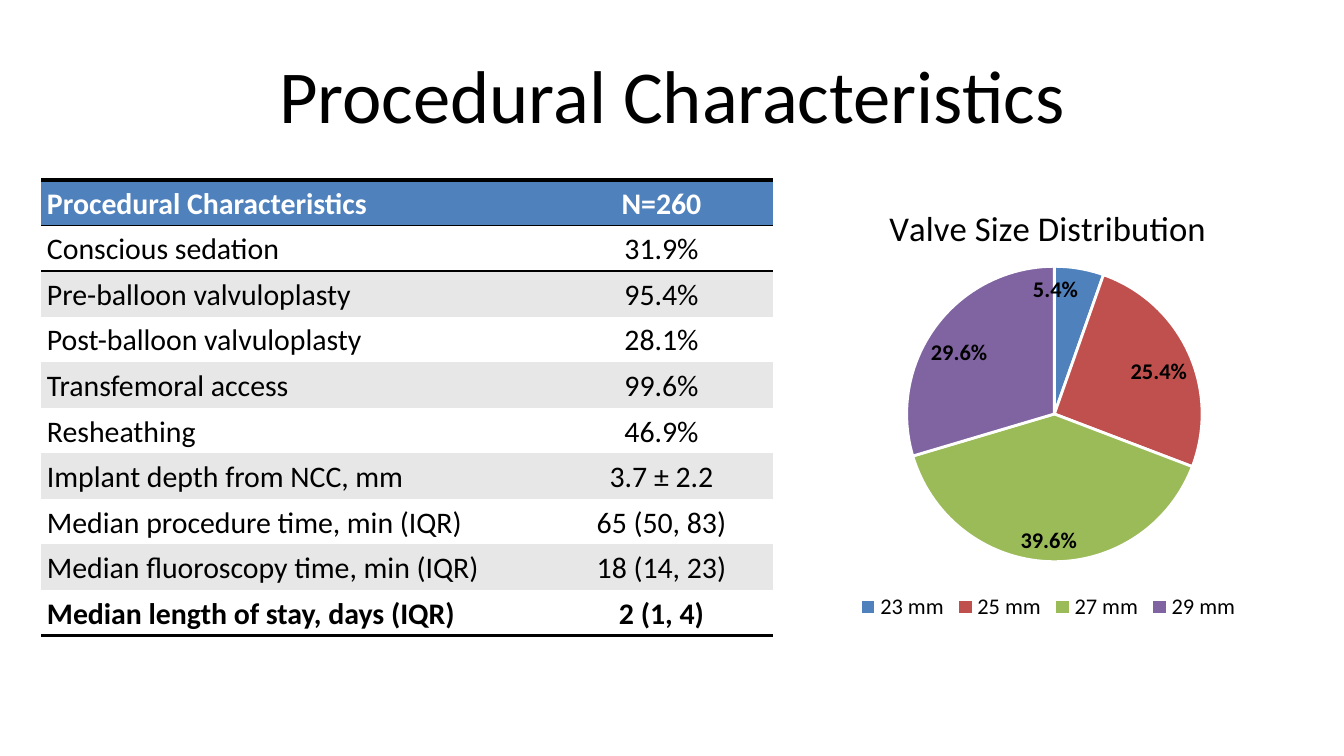
from lxml import etree
from pptx import Presentation
from pptx import util as u
from pptx.chart.data import CategoryChartData
from pptx.dml.color import RGBColor
from pptx.enum import chart as charts, text
from pptx.oxml import parse_xml
from pptx.oxml.ns import nsdecls, qn

SCALE = 914400 / 134.4  # EMU per px
FONT = "Calibri"
COLORS = {
    "black": "000000", "white": "FFFFFF", "band": "E7E7E7",
    "blue": "4F81BD", "red": "C0504D", "green": "9BBB59", "purple": "8064A2",
}
ROWS = [
    ("Procedural Characteristics", "N=260"),
    ("Conscious sedation", "31.9%"),
    ("Pre-balloon valvuloplasty", "95.4%"),
    ("Post-balloon valvuloplasty", "28.1%"),
    ("Transfemoral access", "99.6%"),
    ("Resheathing", "46.9%"),
    ("Implant depth from NCC, mm", "3.7 ± 2.2"),
    ("Median procedure time, min (IQR)", "65 (50, 83)"),
    ("Median fluoroscopy time, min (IQR)", "18 (14, 23)"),
    ("Median length of stay, days (IQR)", "2 (1, 4)"),
]
VALVES = {
    "23 mm": (0.054, "blue"), "25 mm": (0.254, "red"),
    "27 mm": (0.396, "green"), "29 mm": (0.296, "purple"),
}


def px(length):
    return u.Emu(round(length * SCALE))


def rgb(name):
    return RGBColor.from_string(COLORS[name])


def format_font(font, size, color="black", bold=False):
    font.name, font.size, font.bold = FONT, u.Pt(size), bold
    font.color.rgb = rgb(color)


def write_text(frame, words, size, color="black", bold=False, align="LEFT", spacing=None):
    para = frame.paragraphs[0]
    para.alignment = getattr(text.PP_ALIGN, align)
    para.line_spacing = spacing
    span = para.add_run()
    span.text = words
    format_font(span.font, size, color, bold)


def set_borders(cell, **widths):
    """Draw the given sides in black (points) and leave the others open."""
    props = cell._tc.get_or_add_tcPr()
    for place, side in enumerate("LRTB"):
        width = widths.get(side, 0)
        paint = (f'<a:solidFill><a:srgbClr val="{COLORS["black"]}"/></a:solidFill>'
                 if width else "<a:noFill/>")
        props.insert(place, parse_xml(
            f'<a:ln{side} {nsdecls("a")} w="{u.Pt(width)}">{paint}</a:ln{side}>'))


def add_title(slide, words, box):
    title = slide.shapes.title
    title.left, title.top, title.width, title.height = map(px, box)
    title.text_frame.vertical_anchor = text.MSO_ANCHOR.MIDDLE
    write_text(title.text_frame, words, 40, align="CENTER")


def add_procedure_table(slide, left, top, widths, height):
    frame = slide.shapes.add_table(
        len(ROWS), len(widths), px(left), px(top), px(sum(widths)), px(height))
    table = frame.table
    for column, width in zip(table.columns, widths):
        column.width = px(width)
    last = len(ROWS) - 1
    rules = {0: {"T": 2, "B": 1}, 1: {"T": 1, "B": 1}, 2: {"T": 1}, last: {"B": 2}}
    for i, row in enumerate(ROWS):
        table.rows[i].height = px(height / len(ROWS))
        # Header in blue, then white and grey in turn
        fill = "blue" if i == 0 else "white" if i % 2 else "band"
        for j, words in enumerate(row):
            cell = table.cell(i, j)
            cell.margin_left = cell.margin_right = px(6)
            cell.margin_top = cell.margin_bottom = 0
            cell.vertical_anchor = text.MSO_ANCHOR.MIDDLE
            cell.fill.solid()
            cell.fill.fore_color.rgb = rgb(fill)
            set_borders(cell, **rules.get(i, {}))
            write_text(cell.text_frame, words, 16, "black" if i else "white",
                       bold=i in (0, last), align="CENTER" if j else "LEFT", spacing=1.07)


def place_part(parent, **places):
    """Give a chart part a fixed place, as fractions of the chart."""
    for old in parent.findall(qn("c:layout")):
        parent.remove(old)
    layout = etree.Element(qn("c:layout"))
    manual = etree.SubElement(layout, qn("c:manualLayout"))
    for key, value in places.items():
        etree.SubElement(manual, qn(f"c:{key}")).set("val", str(value))
    return layout


def add_valve_pie(slide, words, box):
    data = CategoryChartData(number_format="0.0%")
    data.categories = list(VALVES)
    data.add_series(words, [share for share, _ in VALVES.values()])
    chart = slide.shapes.add_chart(charts.XL_CHART_TYPE.PIE, *map(px, box), data).chart
    format_font(chart.font, 10)

    # Title and plot area
    chart.has_title = True
    write_text(chart.chart_title.text_frame, words, 18.6, align="CENTER")
    chart.chart_title.include_in_layout = False
    title = chart.chart_title._element
    title.find(qn("c:tx")).addnext(
        place_part(title, xMode="edge", yMode="edge", x=0.22, y=0.04))
    area = chart._chartSpace.chart.plotArea
    area.insert(0, place_part(area, layoutTarget="inner", xMode="edge", yMode="edge",
                              x=0.26, y=0.18, w=0.5, h=0.69))

    # Legend
    chart.has_legend = True
    chart.legend.position = charts.XL_LEGEND_POSITION.BOTTOM
    chart.legend.include_in_layout = False
    format_font(chart.legend.font, 12)

    # Slices and their labels
    plot = chart.plots[0]
    plot.vary_by_categories = True
    points = plot.series[0].points
    for i, (_, color) in enumerate(VALVES.values()):
        slice_format = points[i].format
        slice_format.fill.solid()
        slice_format.fill.fore_color.rgb = rgb(color)
        slice_format.line.color.rgb = rgb("white")
        slice_format.line.width = u.Pt(1.5)
    labels = plot.series[0].data_labels
    labels.show_value = True
    labels.show_percentage = labels.show_category_name = False
    labels.number_format, labels.number_format_is_linked = "0.0%", False
    labels.position = charts.XL_LABEL_POSITION.BEST_FIT
    format_font(labels.font, 12, bold=True)

    # The narrow slice keeps its label inside, clear of the title
    narrow_label = points[0].data_label
    format_font(narrow_label.font, 12, bold=True)
    narrow_label.position = charts.XL_LABEL_POSITION.INSIDE_END


def main():
    deck = Presentation()
    deck.slide_width, deck.slide_height = px(1344), px(756)
    slide = deck.slides.add_slide(deck.slide_layouts.get_by_name("Title Only"))
    add_title(slide, "Procedural Characteristics", (67, 31, 1210, 126))
    add_procedure_table(slide, 41, 180, (509, 223), 456)
    add_valve_pie(slide, "Valve Size Distribution", (753, 180, 591, 446))
    deck.save("out.pptx")


if __name__ == "__main__":
    main()
